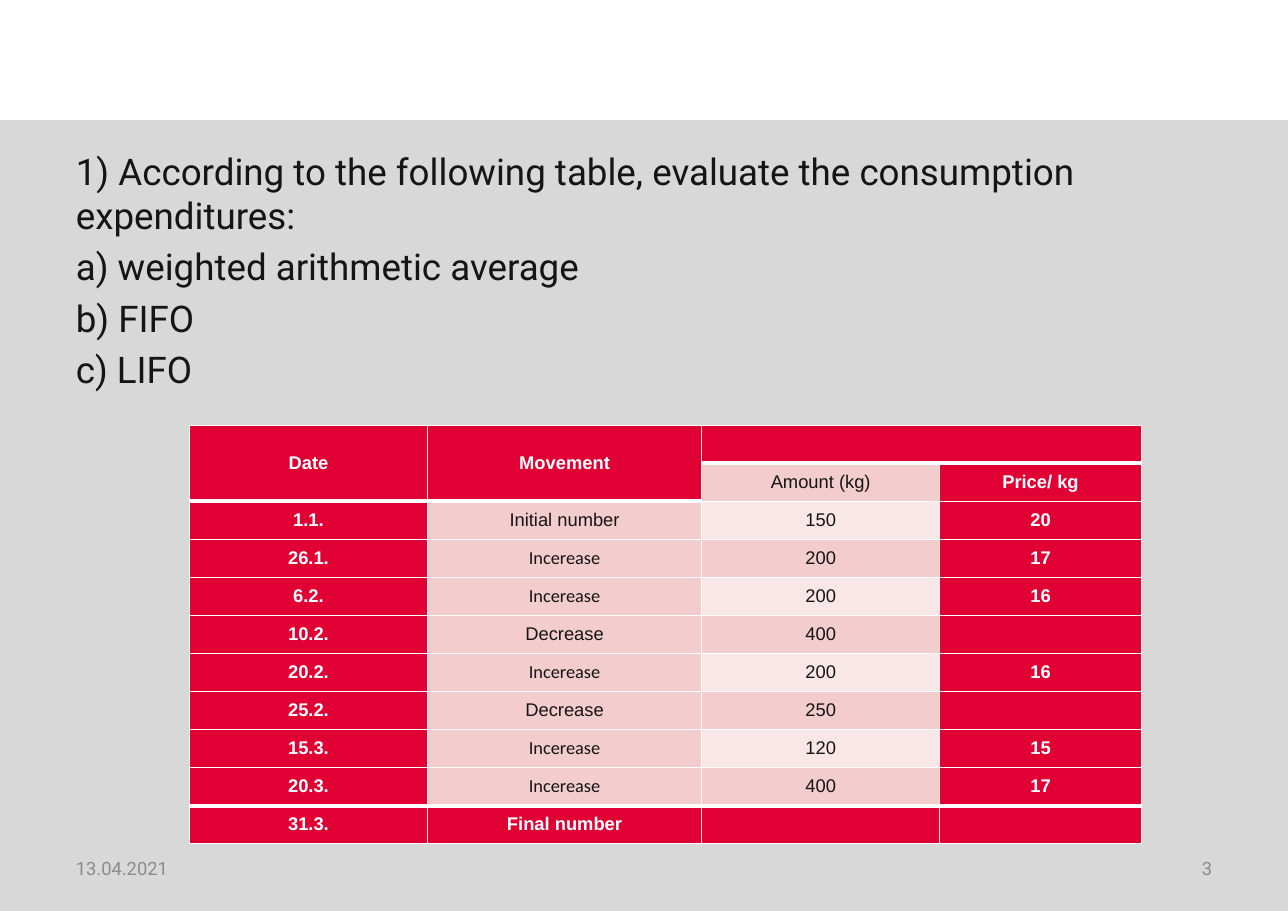
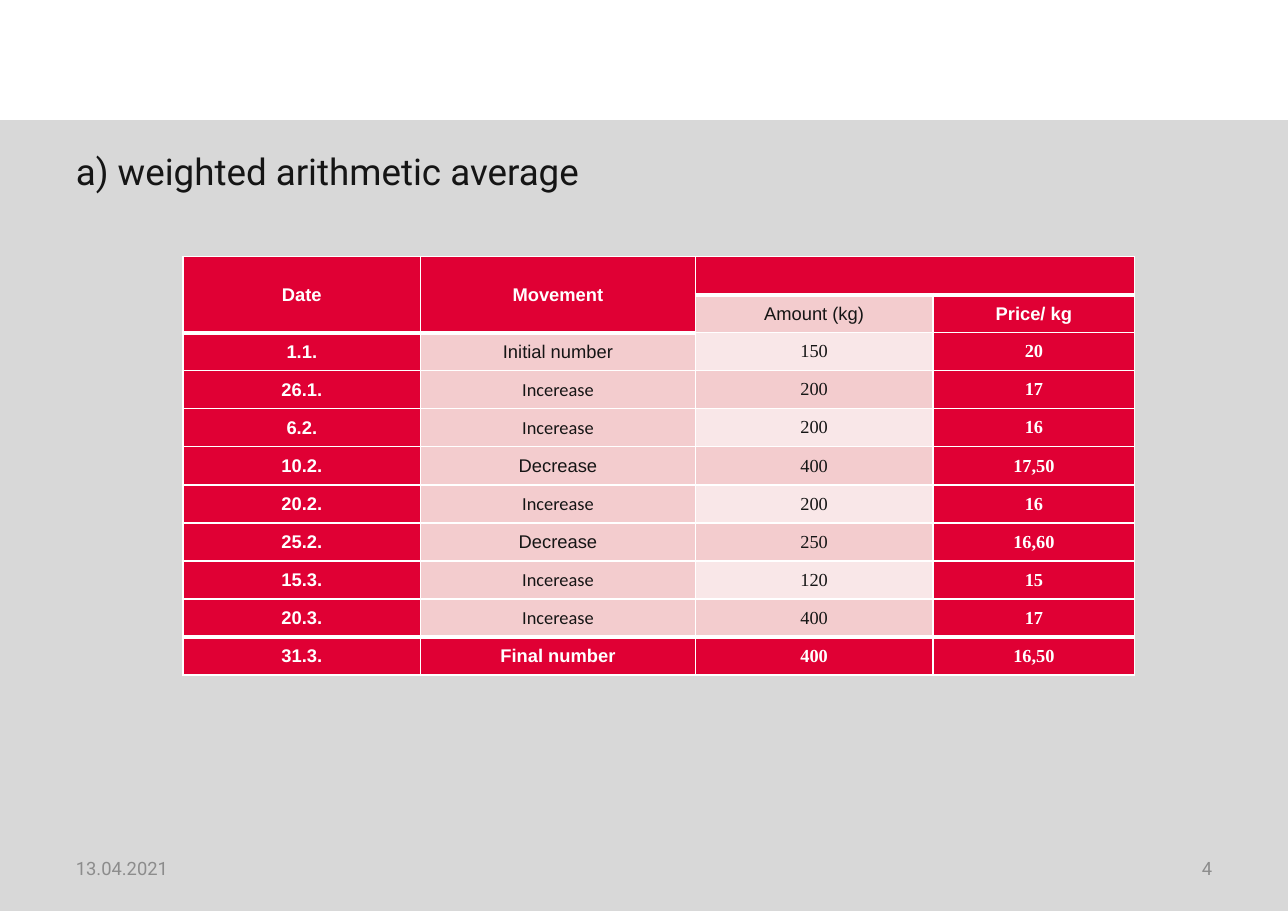
import pptx
import pptx.dml.color
import pptx.enum.shapes
import pptx.enum.text
import pptx.oxml.ns
import pptx.util
from lxml import etree

inch = pptx.util.Inches
ALIGN = pptx.enum.text.PP_ALIGN
MIDDLE = pptx.enum.text.MSO_ANCHOR.MIDDLE

WIDTH, HEIGHT = 11.69, 8.27
BAND_TOP = 1.09
MARGIN = 0.59
FOOTER_TOP, FOOTER_WIDTH, FOOTER_HEIGHT = 7.66, 2.73, 0.44
COLUMNS = (2.16, 2.49, 2.16, 1.83)
TABLE_HEIGHT = 3.8

RED, PINK, PALE, WHITE = "E00034", "F3CCCE", "F9E7E8", "FFFFFF"
INK, GREY, BAND = "151515", "8C8C8C", "D8D8D8"

DATE = "13.04.2021"
HEADER = [
    ("Date", "Movement", "", ""),
    ("", "", "Amount (kg)", "Price/ kg"),
]
MOVEMENTS = [
    ("1.1.", "Initial number", "150"),
    ("26.1.", "Incerease", "200"),
    ("6.2.", "Incerease", "200"),
    ("10.2.", "Decrease", "400"),
    ("20.2.", "Incerease", "200"),
    ("25.2.", "Decrease", "250"),
    ("15.3.", "Incerease", "120"),
    ("20.3.", "Incerease", "400"),
]
SLIDES = [
    {
        "number": "3",
        "lines": [
            "1) According to the following table, evaluate the consumption expenditures:",
            "a) weighted arithmetic average",
            "b) FIFO",
            "c) LIFO",
        ],
        "table_at": (1.72, 3.86),
        "number_font": "Arial",
        "prices": ["20", "17", "16", "", "16", "", "15", "17"],
        "final": ("31.3.", "Final number", "", ""),
    },
    {
        "number": "4",
        "lines": ["a) weighted arithmetic average"],
        "table_at": (1.66, 2.33),
        "number_font": "Times New Roman",
        "prices": ["20", "17", "16", "17,50", "16", "16,60", "15", "17"],
        "final": ("31.3.", "Final number", "400", "16,50"),
    },
]


def rgb(value):
    return pptx.dml.color.RGBColor.from_string(value)


def style(paragraph, font, size, color, bold=False, align=ALIGN.LEFT):
    paragraph.alignment = align
    paragraph.font.name = font
    paragraph.font.size = pptx.util.Pt(size)
    paragraph.font.color.rgb = rgb(color)
    paragraph.font.bold = bold


def add_text(slide, box, lines, size, color, align=ALIGN.LEFT, anchor=None):
    frame = slide.shapes.add_textbox(*map(inch, box)).text_frame
    frame.word_wrap = True
    frame.vertical_anchor = anchor
    frame.text = "\n".join(lines)
    for index, paragraph in enumerate(frame.paragraphs):
        if index:
            paragraph.space_before = pptx.util.Pt(size * 0.2)
        style(paragraph, "Roboto", size, color, align=align)


def add_frame(slide, number):
    """Draw the grey band, the date and the slide number."""
    band = slide.shapes.add_shape(
        pptx.enum.shapes.MSO_SHAPE.RECTANGLE,
        0, inch(BAND_TOP), inch(WIDTH), inch(HEIGHT - BAND_TOP))
    band.shadow.inherit = False
    band.fill.solid()
    band.fill.fore_color.rgb = rgb(BAND)
    band.line.fill.background()
    footers = [
        (MARGIN, DATE, ALIGN.LEFT),
        (WIDTH - MARGIN - FOOTER_WIDTH, number, ALIGN.RIGHT),
    ]
    for left, text, align in footers:
        add_text(slide, (left, FOOTER_TOP, FOOTER_WIDTH, FOOTER_HEIGHT),
                 [text], 12, GREY, align, MIDDLE)


def set_borders(cell, widths):
    properties = cell._tc.get_or_add_tcPr()
    for side, width in zip("LRTB", widths):
        line = etree.SubElement(properties, pptx.oxml.ns.qn(f"a:ln{side}"),
                                w=str(pptx.util.Pt(width)))
        fill = etree.SubElement(line, pptx.oxml.ns.qn("a:solidFill"))
        etree.SubElement(fill, pptx.oxml.ns.qn("a:srgbClr"), val=WHITE)


def cell_fill(row, column, last):
    """Red frame around pink cells, with banding in the amounts column."""
    if row in (0, last) or column in (0, 3) or (row == 1 and column == 1):
        return RED
    return PALE if column == 2 and row % 2 == 0 else PINK


def cell_font(row, column, text, number_font):
    if text == "Incerease":
        return "Calibri"
    return number_font if row > 1 and column > 1 else "Arial"


def add_stock_table(slide, content):
    movements = [(*movement, price) for movement, price
                 in zip(MOVEMENTS, content["prices"])]
    rows = HEADER + movements + [content["final"]]
    last = len(rows) - 1
    left, top = content["table_at"]
    table = slide.shapes.add_table(
        len(rows), len(COLUMNS), inch(left), inch(top),
        inch(sum(COLUMNS)), inch(TABLE_HEIGHT)).table
    table.first_row = table.horz_banding = False
    for column, width in zip(table.columns, COLUMNS):
        column.width = inch(width)
    for row in table.rows:
        row.height = inch(TABLE_HEIGHT / len(rows))
    for start, end in (((0, 0), (1, 0)), ((0, 1), (1, 1)), ((0, 2), (0, 3))):
        table.cell(*start).merge(table.cell(*end))

    for row, texts in enumerate(rows):
        for column, text in enumerate(texts):
            cell = table.cell(row, column)
            thick_edges = (2 if column < 2 else 1, last)
            bottom = row + (cell.span_height if cell.is_merge_origin else 1)
            set_borders(cell, (1, 1, *(3 if edge in thick_edges else 1
                                       for edge in (row, bottom))))
            fill = cell_fill(row, column, last)
            cell.fill.solid()
            cell.fill.fore_color.rgb = rgb(fill)
            cell.vertical_anchor = MIDDLE
            cell.margin_left = cell.margin_right = inch(0.07)
            cell.margin_top = cell.margin_bottom = 0
            cell.text = text
            on_red = fill == RED
            style(cell.text_frame.paragraphs[0],
                  cell_font(row, column, text, content["number_font"]), 12,
                  WHITE if on_red else INK, on_red, ALIGN.CENTER)


def main():
    deck = pptx.Presentation()
    deck.slide_width, deck.slide_height = inch(WIDTH), inch(HEIGHT)
    for content in SLIDES:
        slide = deck.slides.add_slide(deck.slide_layouts[6])
        add_frame(slide, content["number"])
        add_text(slide, (MARGIN, 1.3, WIDTH - 2 * MARGIN, 6.09),
                 content["lines"], 24, INK)
        add_stock_table(slide, content)
    deck.save("out.pptx")


if __name__ == "__main__":
    main()
